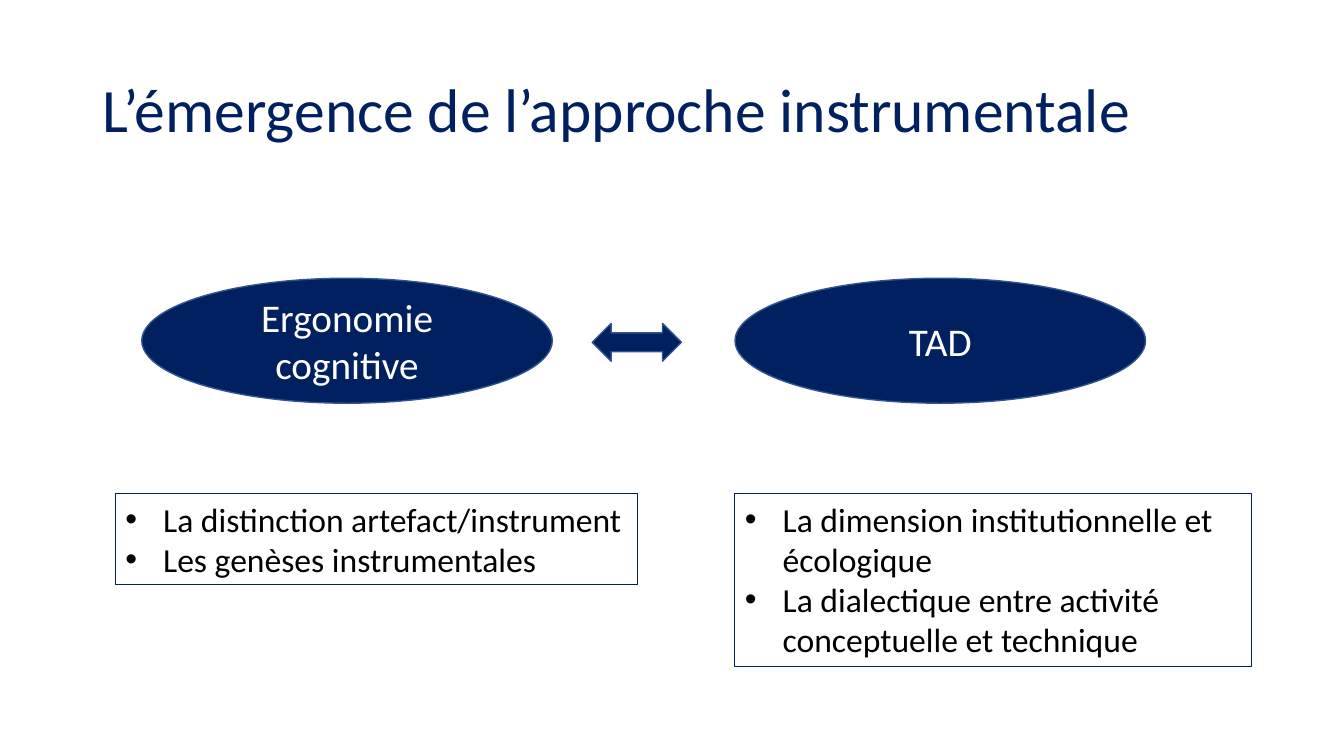
from lxml import etree
from pptx import Presentation
from pptx import util as u
from pptx.dml.color import RGBColor
from pptx.enum import shapes, text
from pptx.oxml.ns import qn

PX = 9525  # EMU per px, 96 px to the inch
COLORS = {"navy": "002060", "edge": "325491", "white": "FFFFFF", "black": "000000"}
FONT = "Calibri"
BULLET_INDENT = 36
LEFT_X, RIGHT_X = 135, 700
CONCEPT_Y, LIST_Y = 265, 470


def px(*lengths):
    return [u.Emu(n * PX) for n in lengths]


def rgb(name):
    return RGBColor.from_string(COLORS[name])


def write(tf, lines, size, color, **paragraph_format):
    """Fill the frame with one paragraph per line, all in the same format."""
    tf.word_wrap = True
    for i, line in enumerate(lines):
        p = tf.add_paragraph() if i else tf.paragraphs[0]
        r = p.add_run()
        r.text = line
        for name, value in {"name": FONT, "size": u.Pt(size)}.items():
            setattr(r.font, name, value)
        r.font.color.rgb = rgb(color)
        for name, value in paragraph_format.items():
            setattr(p, name, value)


def add_title(slide, title, box):
    sp = slide.shapes.title
    for name, value in zip(("left", "top", "width", "height"), px(*box)):
        setattr(sp, name, value)
    sp.text_frame.vertical_anchor = text.MSO_ANCHOR.MIDDLE
    write(sp.text_frame, [title], 44, "navy",
          alignment=text.PP_ALIGN.LEFT, line_spacing=0.9)


def add_navy_shape(slide, kind, box):
    sp = slide.shapes.add_shape(kind, *px(*box))
    sp.shadow.inherit = False
    sp.fill.solid()
    sp.fill.fore_color.rgb = rgb("navy")
    sp.line.color.rgb = rgb("edge")
    sp.line.width = u.Pt(1)
    return sp


def add_concept(slide, label, x):
    sp = add_navy_shape(slide, shapes.MSO_SHAPE.OVAL, (x, CONCEPT_Y, 391, 119))
    sp.text_frame.vertical_anchor = text.MSO_ANCHOR.MIDDLE
    write(sp.text_frame, [label], 28, "white", alignment=text.PP_ALIGN.CENTER)


def add_bullet(p):
    pPr = p._p.get_or_add_pPr()
    indent = BULLET_INDENT * PX
    pPr.set("marL", str(indent))
    pPr.set("indent", str(-indent))
    etree.SubElement(pPr, qn("a:buFont")).set("typeface", "Arial")
    etree.SubElement(pPr, qn("a:buChar")).set("char", "•")


def add_bullet_box(slide, items, box):
    sp = slide.shapes.add_textbox(*px(*box))
    sp.line.color.rgb = rgb("navy")
    sp.line.width = u.Pt(0.75)
    tf = sp.text_frame
    write(tf, items, 24, "black")
    tf.auto_size = text.MSO_AUTO_SIZE.SHAPE_TO_FIT_TEXT
    for p in tf.paragraphs:
        add_bullet(p)


def main():
    prs = Presentation()
    prs.slide_width, prs.slide_height = px(1280, 720)
    slide = prs.slides.add_slide(prs.slide_layouts.get_by_name("Title Only"))

    add_title(slide, "L’émergence de l’approche instrumentale", (88, 38, 1104, 139))
    add_concept(slide, "Ergonomie cognitive", LEFT_X)
    add_concept(slide, "TAD", RIGHT_X)
    add_navy_shape(slide, shapes.MSO_SHAPE.LEFT_RIGHT_ARROW, (564, 308, 85, 36))
    add_bullet_box(slide,
                   ["La distinction artefact/instrument",
                    "Les genèses instrumentales"],
                   (110, LIST_Y, 497, 87))
    add_bullet_box(slide,
                   ["La dimension institutionnelle et écologique",
                    "La dialectique entre activité conceptuelle et technique"],
                   (RIGHT_X, LIST_Y, 492, 165))
    prs.save("out.pptx")


if __name__ == "__main__":
    main()
